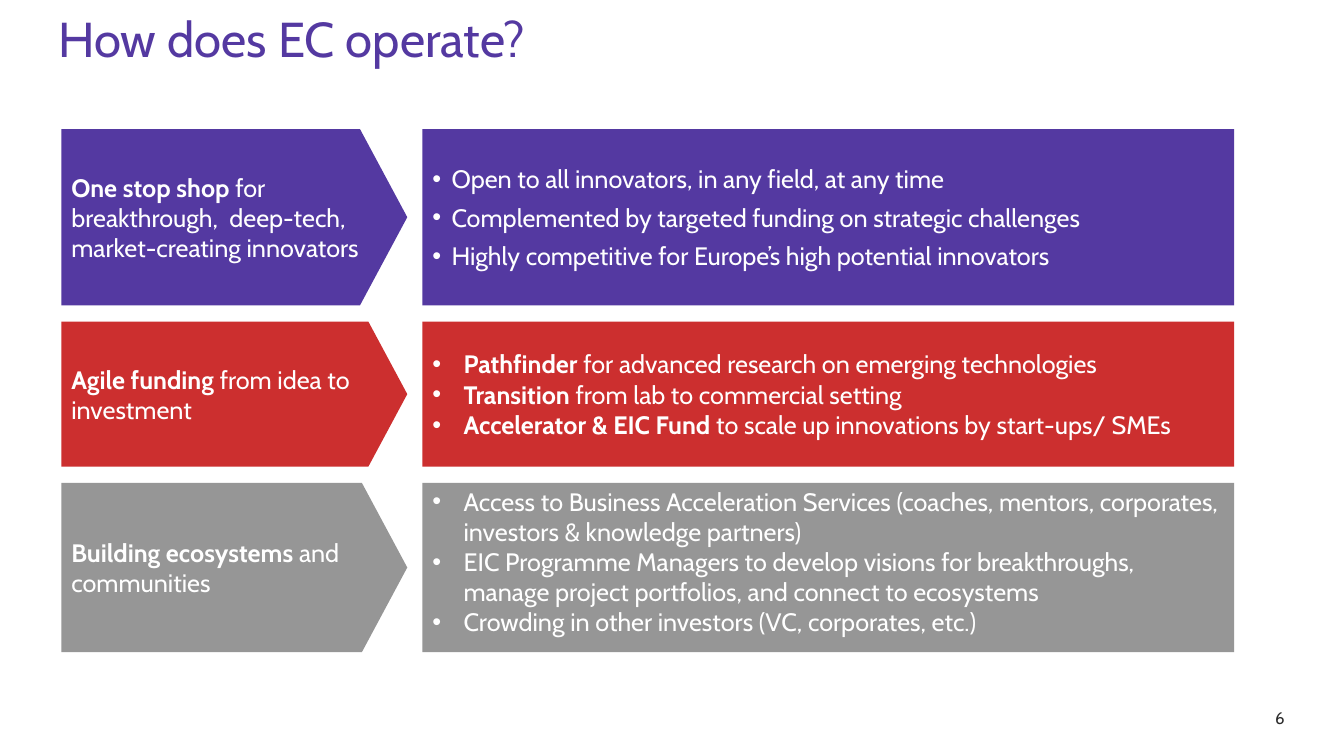
from pptx import Presentation
from pptx.dml.color import RGBColor
from pptx.enum.shapes import MSO_SHAPE
from pptx.enum.text import MSO_ANCHOR, PP_ALIGN
from pptx.oxml.ns import qn
from pptx.util import Inches, Pt
from lxml import etree

COLORS = {"purple": "5439A1", "red": "CC2F2F", "grey": "969696",
          "white": "FFFFFF", "dark": "2C2C2C"}


def write(frame, paragraphs, size=18, color="white", anchor=MSO_ANCHOR.MIDDLE,
          indent=0, space_after=0, line_spacing=None):
    """Fill a frame; each paragraph is a (bold, regular) pair, bulleted if indented."""
    frame.word_wrap = True
    frame.vertical_anchor = anchor
    for i, parts in enumerate(paragraphs):
        para = frame.paragraphs[0] if i == 0 else frame.add_paragraph()
        para.alignment = PP_ALIGN.LEFT
        para.space_after = Pt(space_after)
        if line_spacing:
            para.line_spacing = line_spacing
        if indent:
            props = para._p.get_or_add_pPr()
            props.set("marL", str(Inches(indent)))
            props.set("indent", str(-Inches(indent)))
            etree.SubElement(props, qn("a:buFont")).set("typeface", "Arial")
            etree.SubElement(props, qn("a:buChar")).set("char", "•")
        for text, bold in zip(parts, (True, False)):
            if text:
                run = para.add_run()
                run.text = text
                run.font.name = "Cabin"
                run.font.size = Pt(size)
                run.font.bold = bold
                run.font.color.rgb = RGBColor.from_string(COLORS[color])


prs = Presentation()
prs.slide_width, prs.slide_height = Inches(13.33), Inches(7.5)
slide = prs.slides.add_slide(prs.slide_layouts[6])

# Title and page number
title = slide.shapes.add_textbox(Inches(0.48), Inches(0.1), Inches(12.08), Inches(0.8))
write(title.text_frame, [("", "How does EC operate?")], size=35, color="purple",
      anchor=MSO_ANCHOR.TOP, line_spacing=0.9)
page_number = slide.shapes.add_textbox(Inches(12.55), Inches(6.97), Inches(0.6), Inches(0.4))
write(page_number.text_frame, [("", "6")], size=12, color="dark", anchor=MSO_ANCHOR.TOP)

# Rows: colour, height, bullet indent, space after, bottom margin, pillar, details
rows = [
    ("purple", 1.75, 0.19, 6, 0.05,
     ("One stop shop ", "for breakthrough,  deep-tech, market-creating innovators"),
     [("", "Open to all innovators, in any field, at any time"),
      ("", "Complemented by targeted funding on strategic challenges"),
      ("", "Highly competitive for Europe’s high potential innovators")]),
    ("red", 1.44, 0.31, 0, 0.05,
     ("Agile funding ", "from idea to investment"),
     [("Pathfinder", " for advanced research on emerging technologies"),
      ("Transition", " from lab to commercial setting"),
      ("Accelerator & EIC Fund ", "to scale up innovations by start-ups/ SMEs")]),
    ("grey", 1.68, 0.31, 0, 0.17,
     ("Building ecosystems ", "and communities"),
     [("", "Access to Business Acceleration Services (coaches, mentors, corporates, "
           "investors & knowledge partners)"),
      ("", "EIC Programme Managers to develop visions for breakthroughs, "
           "manage project portfolios, and connect to ecosystems"),
      ("", "Crowding in other investors (VC, corporates, etc.)")]),
]
ROW_GAP = 0.16
top = 1.28
for color, height, indent, space_after, bottom_margin, pillar, details in rows:
    arrow = slide.shapes.add_shape(MSO_SHAPE.PENTAGON, Inches(0.61), Inches(top),
                                   Inches(3.43), Inches(height))
    arrow.adjustments[0] = 0.268
    panel = slide.shapes.add_shape(MSO_SHAPE.RECTANGLE, Inches(4.19), Inches(top),
                                   Inches(8.05), Inches(height))
    for block in (arrow, panel):
        block.shadow.inherit = False
        block.fill.solid()
        block.fill.fore_color.rgb = RGBColor.from_string(COLORS[color])
        block.line.fill.background()
    write(arrow.text_frame, [pillar])
    panel.text_frame.margin_bottom = Inches(bottom_margin)
    write(panel.text_frame, details, indent=indent, space_after=space_after)
    top += height + ROW_GAP

prs.save("out.pptx")
